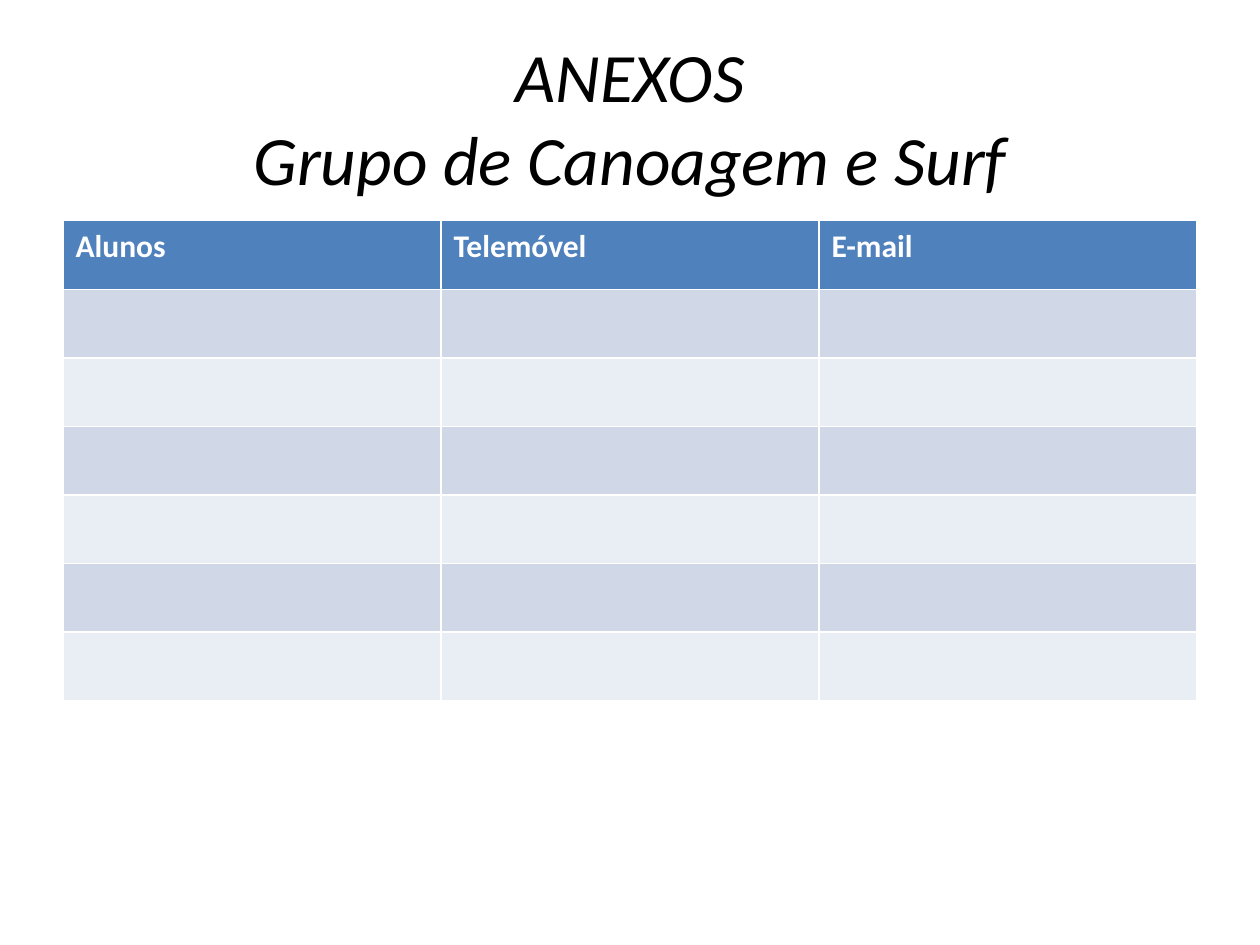
from pptx import Presentation
from pptx.dml.color import RGBColor
from pptx.enum.text import MSO_ANCHOR, MSO_AUTO_SIZE, PP_ALIGN
from pptx.util import Cm, Pt

FONT = "Calibri"
HEADINGS = ["Alunos", "Telemóvel", "E-mail"]
STUDENT_ROWS = 6
HEADER_FILL = "4F81BD"
BAND_FILLS = ["D0D8E8", "E9EDF4"]
LEFT, WIDTH = Cm(1.27), Cm(22.86)


def color(hex_value):
    return RGBColor.from_string(hex_value)


def format_runs(para, size, hex_value, bold=False, italic=False):
    for span in para.runs:
        font = span.font
        font.name, font.size = FONT, Pt(size)
        font.bold, font.italic = bold, italic
        font.color.rgb = color(hex_value)


def add_title(page, text):
    title = page.shapes.title
    title.left, title.top = LEFT, Cm(0.76)
    title.width, title.height = WIDTH, Cm(3.18)
    frame = title.text_frame
    frame.text = text
    frame.word_wrap = True
    frame.auto_size = MSO_AUTO_SIZE.NONE
    frame.vertical_anchor = MSO_ANCHOR.MIDDLE
    para = frame.paragraphs[0]
    para.alignment = PP_ALIGN.CENTER
    format_runs(para, 39.6, "000000", italic=True)


def add_contact_table(page):
    """Add the heading row and empty banded rows; the table style draws the white rules."""
    row_count = STUDENT_ROWS + 1
    table = page.shapes.add_table(
        row_count, len(HEADINGS), LEFT, Cm(4.45), WIDTH, Cm(9.68)
    ).table
    for index, row in enumerate(table.rows):
        fill = BAND_FILLS[(index - 1) % 2] if index else HEADER_FILL
        for cell in row.cells:
            cell.fill.solid()
            cell.fill.fore_color.rgb = color(fill)
    for cell, heading in zip(table.rows[0].cells, HEADINGS):
        cell.text_frame.text = heading
        format_runs(cell.text_frame.paragraphs[0], 18, "FFFFFF", bold=True)


def main():
    deck = Presentation()
    deck.slide_width, deck.slide_height = Cm(25.4), Cm(19.05)
    page = deck.slides.add_slide(deck.slide_layouts[5])
    add_title(page, "ANEXOS\vGrupo de Canoagem e Surf")
    add_contact_table(page)
    deck.save("out.pptx")


if __name__ == "__main__":
    main()
